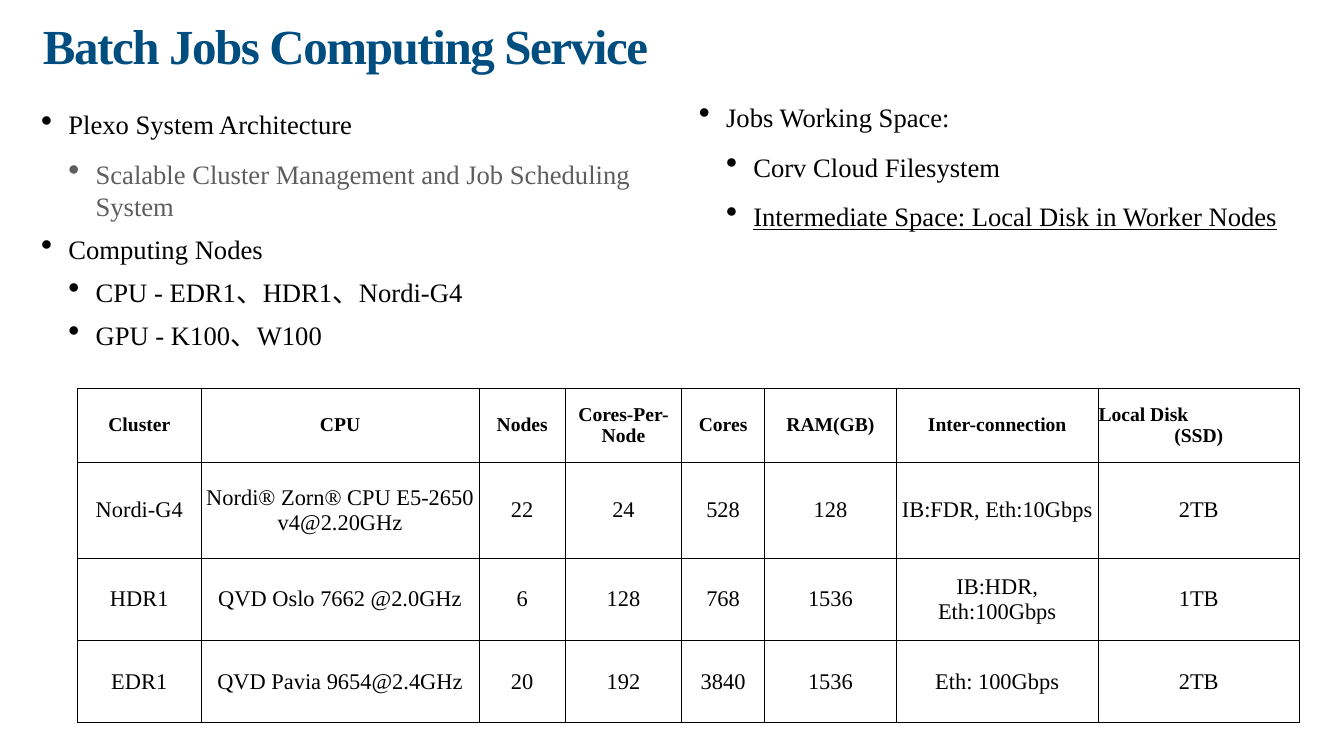
from dataclasses import dataclass

import lxml.etree
import pptx
import pptx.dml.color
import pptx.enum.text
import pptx.oxml.ns
import pptx.util

Cm, Pt = pptx.util.Cm, pptx.util.Pt
RGB = pptx.dml.color.RGBColor.from_string
ALIGN = pptx.enum.text.PP_ALIGN
MIDDLE = pptx.enum.text.MSO_ANCHOR.MIDDLE
qn = pptx.oxml.ns.qn


@dataclass(frozen=True)
class Theme:
    face: str = "Times New Roman"
    title: str = "004D80"
    ink: str = "000000"
    muted: str = "5E5E5E"
    title_size: int = 70
    body_size: int = 38
    head_size: int = 28
    cell_size: int = 32


theme = Theme()


def style(paragraph, size, colour, bold=False):
    paragraph.font.name = theme.face
    paragraph.font.size = Pt(size)
    paragraph.font.color.rgb = RGB(colour)
    paragraph.font.bold = bold


def add_box(page, left, top, width, height):
    box = page.shapes.add_textbox(Cm(left), Cm(top), Cm(width), Cm(height))
    frame = box.text_frame
    frame.word_wrap = True
    frame.margin_left = frame.margin_right = Cm(0.15)
    frame.margin_top = frame.margin_bottom = Cm(0.15)
    return frame


deck = pptx.Presentation()
deck.slide_width, deck.slide_height = Cm(67.74), Cm(38.1)
page = deck.slides.add_slide(deck.slide_layouts[6])

# Title
para = add_box(page, 2.01, 1.22, 37.97, 4.93).paragraphs[0]
para.line_spacing = 0.8
span = para.add_run()
span.text = "Batch Jobs Computing Service"
span._r.get_or_add_rPr().set("spc", "-200")
style(para, theme.title_size, theme.title, bold=True)

# Bullet lists: level, text, line spacing, colour, underline
services = [
    (0, "Plexo System Architecture", 1.0, theme.ink, False),
    (1, "Scalable Cluster Management and Job Scheduling System", 1.0, theme.muted, False),
    (0, "Computing Nodes", 0.8, theme.ink, False),
    (1, "CPU - EDR1、HDR1、Nordi-G4", 0.8, theme.ink, False),
    (1, "GPU - K100、W100", 0.8, theme.ink, False),
]
storage = [
    (0, "Jobs Working Space:", 1.0, theme.ink, False),
    (1, "Corv Cloud Filesystem", 1.0, theme.ink, False),
    (1, "Intermediate Space: Local Disk in Worker Nodes", 1.0, theme.ink, True),
]
indent = Cm(1.37)
for place, items in [((1.93, 5.31, 30, 14.58), services),
                     ((35.08, 4.95, 30.61, 11.02), storage)]:
    frame = add_box(page, *place)
    for index, (level, text, spacing, colour, underline) in enumerate(items):
        para = frame.add_paragraph() if index else frame.paragraphs[0]
        para.text = text
        para.level = level
        para.line_spacing = spacing
        para.space_before = Pt(25)
        properties = para._p.get_or_add_pPr()
        properties.set("marL", str(indent * (level + 1)))
        properties.set("indent", str(-indent))
        lxml.etree.SubElement(properties, qn("a:buSzPct"), val="123000")
        lxml.etree.SubElement(properties, qn("a:buChar"), char="•")
        style(para, theme.body_size, colour)
        if underline:
            para.font.underline = True

# Cluster table
rows = [
    ["Cluster", "CPU", "Nodes", "Cores-Per-Node", "Cores", "RAM(GB)",
     "Inter-connection", "Local Disk\n(SSD)"],
    ["Nordi-G4", "Nordi® Zorn® CPU E5-2650 v4@2.20GHz", "22", "24", "528", "128",
     "IB:FDR, Eth:10Gbps", "2TB"],
    ["HDR1", "QVD Oslo 7662 @2.0GHz", "6", "128", "768", "1536",
     "IB:HDR, Eth:100Gbps", "1TB"],
    ["EDR1", "QVD Pavia 9654@2.4GHz", "20", "192", "3840", "1536",
     "Eth: 100Gbps", "2TB"],
]
widths = [6.22, 14.02, 4.34, 5.87, 4.17, 6.65, 10.16, 10.16]
heights = [3.71, 4.85, 4.14, 4.14]
table = page.shapes.add_table(len(rows), len(widths), Cm(3.91), Cm(19.58),
                              Cm(sum(widths)), Cm(sum(heights))).table
table.first_row = table.horz_banding = False
for column, width in zip(table.columns, widths):
    column.width = Cm(width)
for row, height in zip(table.rows, heights):
    row.height = Cm(height)

for row_index, texts in enumerate(rows):
    header = row_index == 0
    for column_index, text in enumerate(texts):
        cell = table.cell(row_index, column_index)
        cell.text = text
        cell.vertical_anchor = MIDDLE
        cell.margin_left = cell.margin_right = Cm(0.03)
        cell.margin_top = cell.margin_bottom = Cm(0.03)
        for para in cell.text_frame.paragraphs:
            para.alignment = ALIGN.CENTER
            style(para, theme.head_size if header else theme.cell_size, theme.ink, header)
        # Thin border on all four sides
        for side in ("a:lnL", "a:lnR", "a:lnT", "a:lnB"):
            line = lxml.etree.SubElement(cell._tc.get_or_add_tcPr(), qn(side),
                                         w=str(Pt(1)))
            fill = lxml.etree.SubElement(line, qn("a:solidFill"))
            lxml.etree.SubElement(fill, qn("a:srgbClr"), val=theme.ink)
        cell.fill.background()

# The disk heading starts at the left edge of its cell
table.cell(0, 7).text_frame.paragraphs[0].alignment = ALIGN.LEFT

deck.save("out.pptx")
